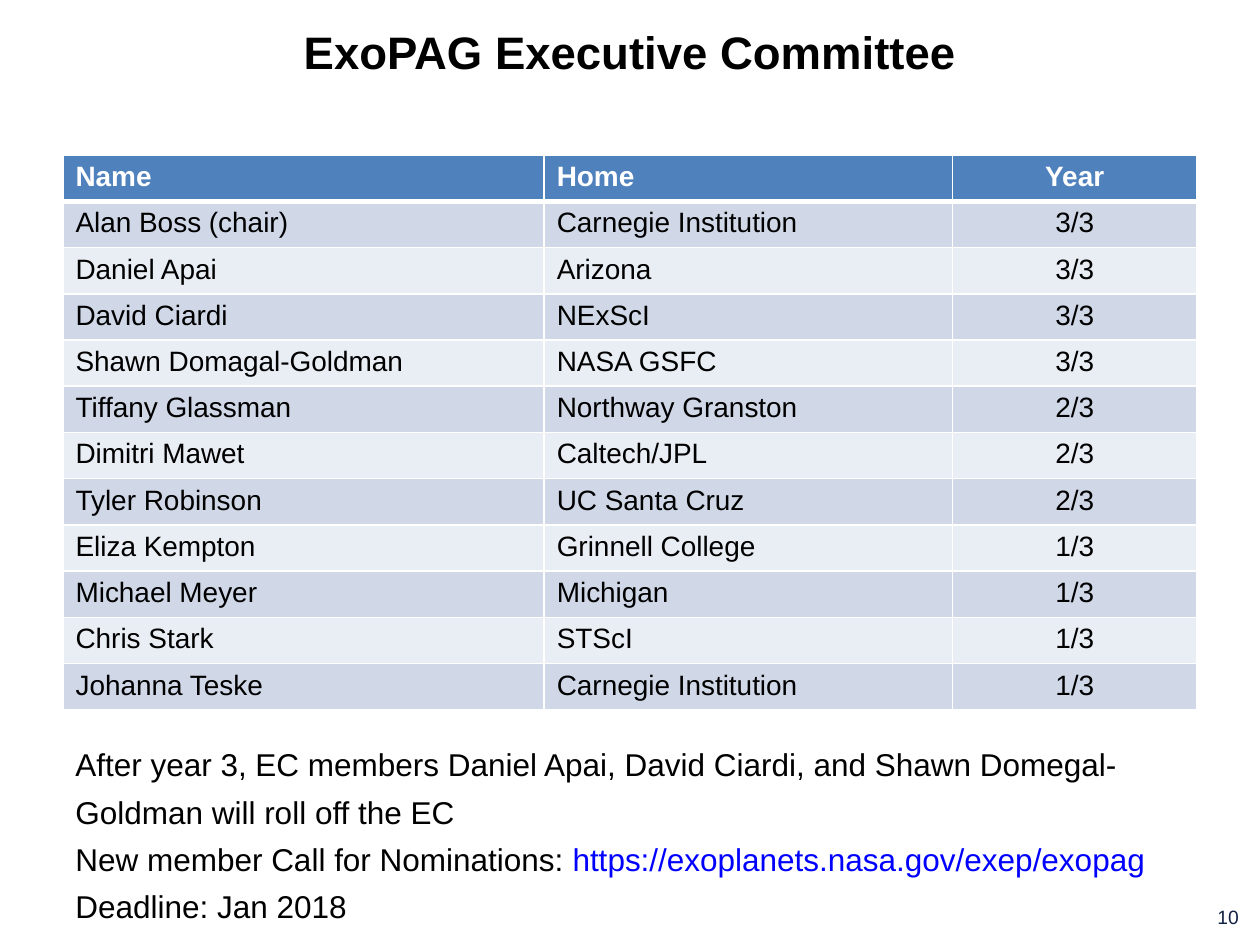
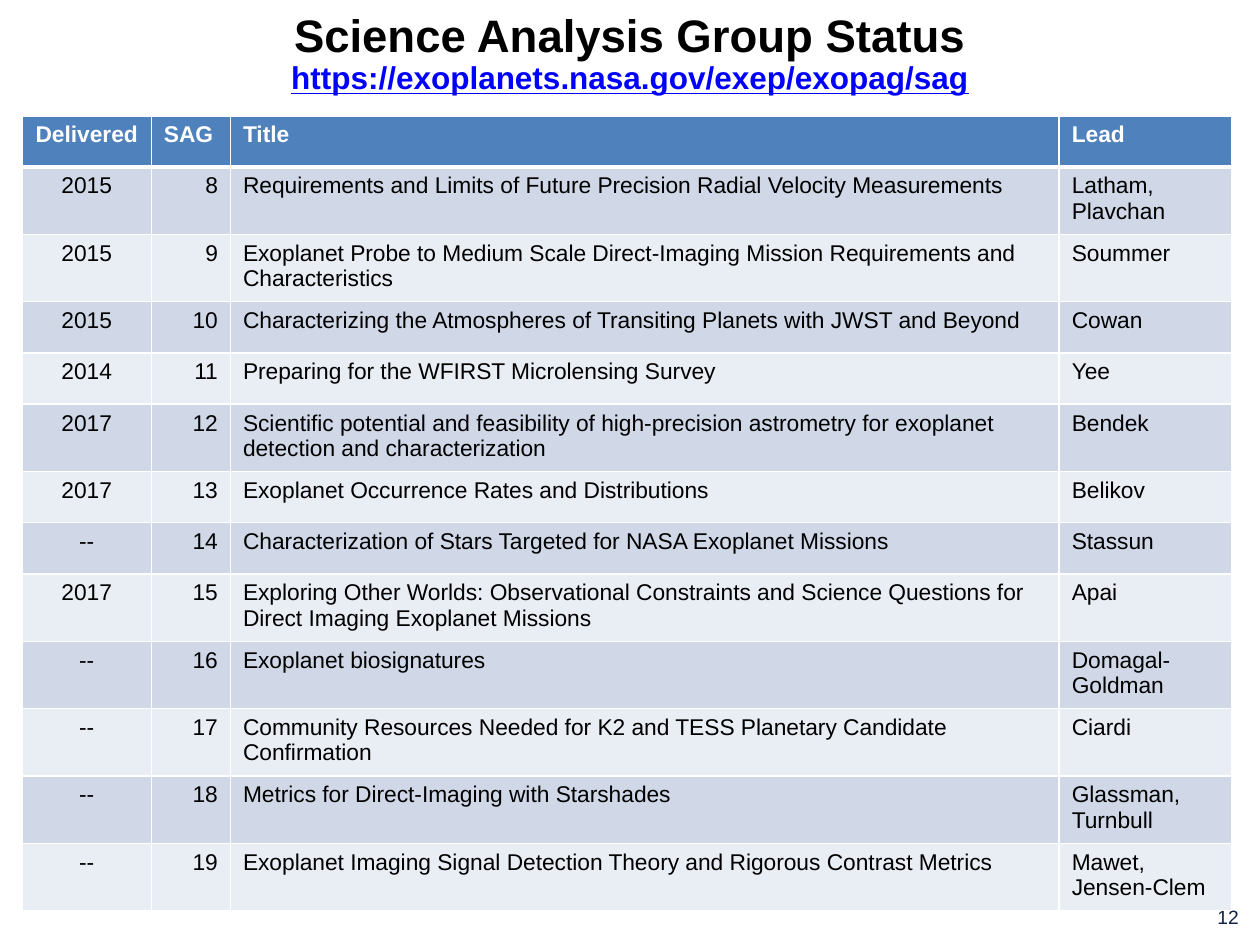
import pptx
import pptx.util
import pptx.dml.color
import pptx.enum.text
import pptx.oxml
import pptx.oxml.ns

Pt = pptx.util.Pt
RGBColor = pptx.dml.color.RGBColor
ALIGN = pptx.enum.text.PP_ALIGN
ANCHOR = pptx.enum.text.MSO_ANCHOR

# Shared look
FONT = "Arial"
BLACK = RGBColor(0x00, 0x00, 0x00)
WHITE = RGBColor(0xFF, 0xFF, 0xFF)
LINK_BLUE = RGBColor(0x00, 0x00, 0xFF)
NUMBER_NAVY = RGBColor(0x11, 0x21, 0x43)
HEADER_BLUE = RGBColor(0x4F, 0x81, 0xBD)
BAND_DARK = RGBColor(0xD0, 0xD8, 0xE8)
BAND_LIGHT = RGBColor(0xE9, 0xED, 0xF4)
LEFT, CENTER, RIGHT = ALIGN.LEFT, ALIGN.CENTER, ALIGN.RIGHT

# Contents
committee = [
    ("Name", "Home", "Year"),
    ("Alan Boss (chair)", "Carnegie Institution", "3/3"),
    ("Daniel Apai", "Arizona", "3/3"),
    ("David Ciardi", "NExScI", "3/3"),
    ("Shawn Domagal-Goldman", "NASA GSFC", "3/3"),
    ("Tiffany Glassman", "Northway Granston", "2/3"),
    ("Dimitri Mawet", "Caltech/JPL", "2/3"),
    ("Tyler Robinson", "UC Santa Cruz", "2/3"),
    ("Eliza Kempton", "Grinnell College", "1/3"),
    ("Michael Meyer", "Michigan", "1/3"),
    ("Chris Stark", "STScI", "1/3"),
    ("Johanna Teske", "Carnegie Institution", "1/3"),
]
analysis_groups = [
    ("Delivered", "SAG", "Title", "Lead"),
    ("2015", "8", "Requirements and Limits of Future Precision Radial Velocity Measurements",
     "Latham, Plavchan"),
    ("2015", "9", "Exoplanet Probe to Medium Scale Direct-Imaging Mission Requirements "
     "and Characteristics", "Soummer"),
    ("2015", "10", "Characterizing the Atmospheres of Transiting Planets with JWST and Beyond",
     "Cowan"),
    ("2014", "11", "Preparing for the WFIRST Microlensing Survey", "Yee"),
    ("2017", "12", "Scientific potential and feasibility of high-precision astrometry "
     "for exoplanet detection and characterization", "Bendek"),
    ("2017", "13", "Exoplanet Occurrence Rates and Distributions", "Belikov"),
    ("--", "14", "Characterization of Stars Targeted for NASA Exoplanet Missions", "Stassun"),
    ("2017", "15", "Exploring Other Worlds: Observational Constraints and Science Questions "
     "for Direct Imaging Exoplanet Missions", "Apai"),
    ("--", "16", "Exoplanet biosignatures", "Domagal-Goldman"),
    ("--", "17", "Community Resources Needed for K2 and TESS Planetary Candidate Confirmation",
     "Ciardi"),
    ("--", "18", "Metrics for Direct-Imaging with Starshades", "Glassman, Turnbull"),
    ("--", "19", "Exoplanet Imaging Signal Detection Theory and Rigorous Contrast Metrics",
     "Mawet, Jensen-Clem"),
]
pages = [
    dict(title="ExoPAG Executive Committee", number="10", rows=committee,
         left=36, top=88.6, widths=(275, 233.3, 139.7), row_height=23.8, size=16,
         header_aligns=(LEFT, LEFT, CENTER), aligns=(LEFT, LEFT, CENTER)),
    dict(title="Science Analysis Group Status\vhttps://exoplanets.nasa.gov/exep/exopag/sag",
         number="12", rows=analysis_groups,
         left=12.5, top=66.2, widths=(74, 45.2, 473.6, 98.4), row_height=29.3, size=13,
         header_aligns=(CENTER, LEFT, LEFT, LEFT), aligns=(CENTER, RIGHT, LEFT, LEFT)),
]


def style(span, size, color, bold=False):
    span.font.name = FONT
    span.font.size = Pt(size)
    span.font.color.rgb = color
    span.font.bold = bold


def add_borders(cell, row_index):
    """White cell borders, heavier between the header and the first row."""
    heavy_side = {0: "lnB", 1: "lnT"}.get(row_index)
    for side in ("lnL", "lnR", "lnT", "lnB"):
        width = Pt(3 if side == heavy_side else 1)
        cell._tc.get_or_add_tcPr().append(pptx.oxml.parse_xml(
            f'<a:{side} {pptx.oxml.ns.nsdecls("a")} w="{width}"><a:solidFill>'
            f'<a:srgbClr val="{WHITE}"/></a:solidFill></a:{side}>'))


deck = pptx.Presentation()
deck.slide_width, deck.slide_height = Pt(720), Pt(540)

for content in pages:
    page = deck.slides.add_slide(deck.slide_layouts[5])

    # Title, with an optional link line below it
    title = page.shapes.title
    title.left, title.top, title.width, title.height = Pt(36), Pt(3), Pt(648), Pt(57)
    frame = title.text_frame
    frame.text = content["title"]
    frame.auto_size = pptx.enum.text.MSO_AUTO_SIZE.NONE
    frame.vertical_anchor = ANCHOR.MIDDLE
    para = frame.paragraphs[0]
    para.alignment = CENTER
    para.line_spacing = 0.9
    style(para.runs[0], 26, BLACK, bold=True)
    for span in para.runs[1:]:
        style(span, 18, LINK_BLUE, bold=True)
        span.font.underline = True

    # Page number
    box = page.shapes.add_textbox(Pt(547), Pt(514), Pt(168), Pt(22))
    box.text_frame.word_wrap = True
    para = box.text_frame.paragraphs[0]
    para.text = content["number"]
    para.alignment = RIGHT
    style(para.runs[0], 11, NUMBER_NAVY)

    # Table
    rows, widths = content["rows"], content["widths"]
    table = page.shapes.add_table(
        len(rows), len(widths), Pt(content["left"]), Pt(content["top"]),
        Pt(sum(widths)), Pt(content["row_height"] * len(rows))).table
    for column, width in zip(table.columns, widths):
        column.width = Pt(width)
    for row_index, row in enumerate(rows):
        table.rows[row_index].height = Pt(content["row_height"])
        is_header = row_index == 0
        band = HEADER_BLUE if is_header else BAND_DARK if row_index % 2 else BAND_LIGHT
        aligns = content["header_aligns" if is_header else "aligns"]
        for column_index, words in enumerate(row):
            cell = table.cell(row_index, column_index)
            add_borders(cell, row_index)
            cell.fill.solid()
            cell.fill.fore_color.rgb = band
            para = cell.text_frame.paragraphs[0]
            para.text = words
            para.alignment = aligns[column_index]
            style(para.runs[0], content["size"], WHITE if is_header else BLACK, is_header)

# Nomination notes under the committee table
box = deck.slides[0].shapes.add_textbox(Pt(36), Pt(417), Pt(648), Pt(111))
frame = box.text_frame
frame.word_wrap = True
notes = [
    ("After year 3, EC members Daniel Apai, David Ciardi, and Shawn Domegal-Goldman "
     "will roll off the EC", ""),
    ("New member Call for Nominations: ", "https://exoplanets.nasa.gov/exep/exopag"),
    ("Deadline: Jan 2018", ""),
]
for index, (words, link) in enumerate(notes):
    para = frame.add_paragraph() if index else frame.paragraphs[0]
    para.text = words
    para.line_spacing = 1.25
    style(para.runs[0], 18, BLACK)
    if link:
        span = para.add_run()
        span.text = link
        style(span, 18, LINK_BLUE)

deck.save("out.pptx")
